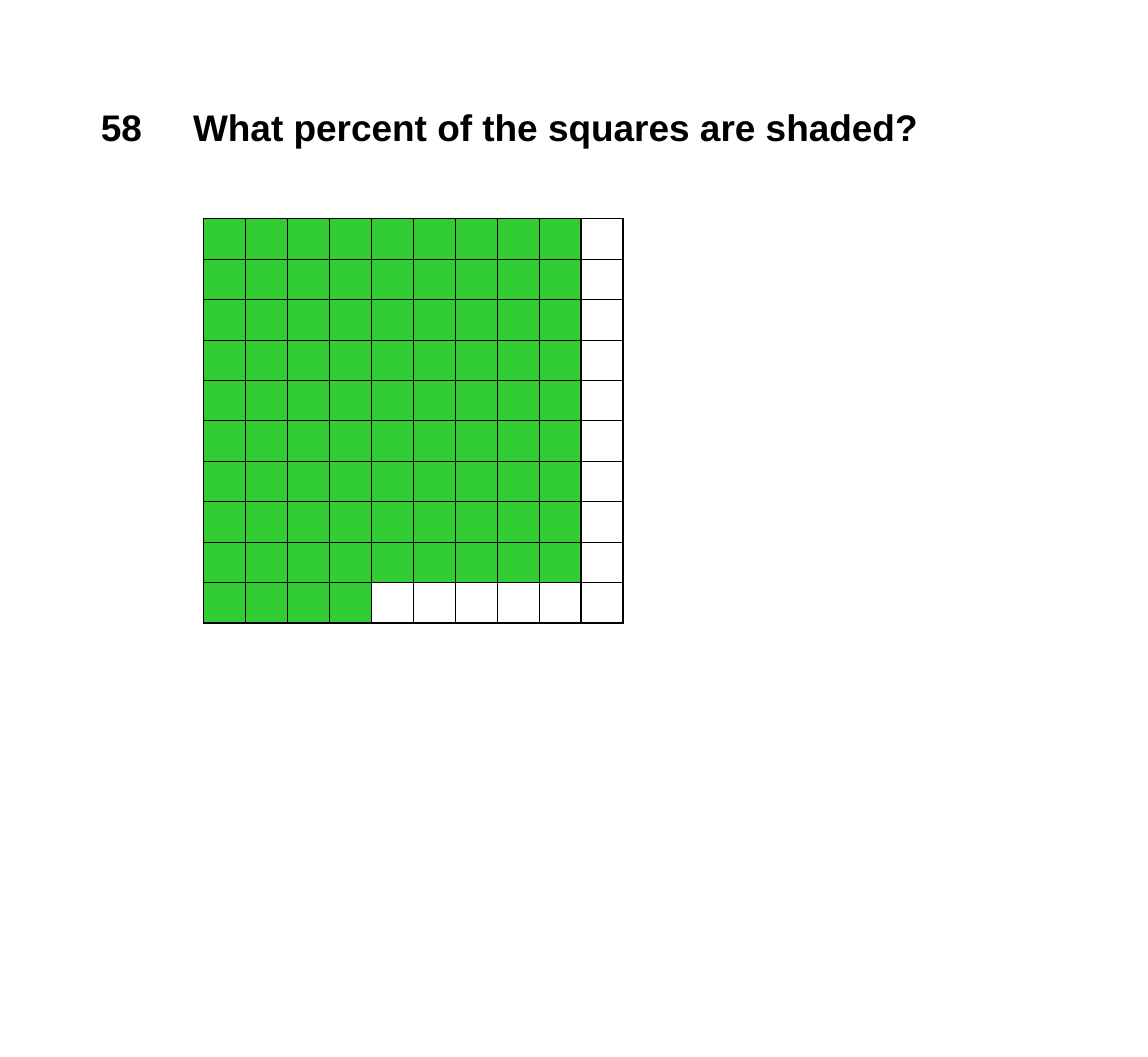
from itertools import product

from lxml.etree import SubElement
from pptx import Presentation
from pptx.dml.color import RGBColor
from pptx.enum.text import MSO_ANCHOR, MSO_AUTO_SIZE, PP_ALIGN
from pptx.oxml.ns import qn
from pptx.util import Pt

EMU_PER_PX = 9144
BLACK = RGBColor(0x00, 0x00, 0x00)
WHITE = RGBColor(0xFF, 0xFF, 0xFF)
GREEN = RGBColor(0x32, 0xCD, 0x32)
GRID_SIZE = 10
FULL_SHADED_COLUMNS = 9
LAST_ROW_SHADED = 4


def px(length):
    return int(length * EMU_PER_PX)


def write_text(shape, text, size=28, font="Arial", color=BLACK, bold=True, align=PP_ALIGN.LEFT):
    frame = shape.text_frame
    frame.word_wrap = True
    frame.auto_size = MSO_AUTO_SIZE.SHAPE_TO_FIT_TEXT
    frame.vertical_anchor = MSO_ANCHOR.TOP
    frame.margin_left = frame.margin_right = px(11)
    frame.margin_top = frame.margin_bottom = px(5)
    paragraph = frame.paragraphs[0]
    paragraph.alignment = align
    run = paragraph.add_run()
    run.text = text
    run.font.name = font
    run.font.size = Pt(size)
    run.font.bold = bold
    run.font.color.rgb = color


def add_question(slide, left, top, width, height):
    number = slide.shapes.add_textbox(px(left), px(top), px(width), px(height))
    write_text(number, "58")
    title = slide.shapes.title
    title.left, title.top = px(left + 97), px(top)
    title.width, title.height = px(width), px(height)
    write_text(title, "What percent of the squares are shaded?")


def add_borders(cell, color=BLACK, width=1):
    properties = cell._tc.get_or_add_tcPr()
    for index, side in enumerate(("a:lnL", "a:lnR", "a:lnT", "a:lnB")):
        line = SubElement(properties, qn(side), w=str(Pt(width)))
        fill = SubElement(line, qn("a:solidFill"))
        SubElement(fill, qn("a:srgbClr"), val=str(color))
        properties.insert(index, line)


def add_square_grid(slide, left, top, width, height):
    frame = slide.shapes.add_table(
        GRID_SIZE, GRID_SIZE, px(left), px(top), px(width), px(height)
    )
    table = frame.table
    table.first_row = table.horz_banding = False
    for row, column in product(range(GRID_SIZE), repeat=2):
        cell = table.cell(row, column)
        shaded = LAST_ROW_SHADED if row == GRID_SIZE - 1 else FULL_SHADED_COLUMNS
        cell.fill.solid()
        cell.fill.fore_color.rgb = GREEN if column < shaded else WHITE
        cell.text_frame.paragraphs[0].font.size = Pt(12)
        add_borders(cell)


def main():
    presentation = Presentation()
    presentation.slide_width = px(1207)
    presentation.slide_height = px(1111)
    slide = presentation.slides.add_slide(presentation.slide_layouts[5])
    add_question(slide, 95, 105, 927, 58)
    add_square_grid(slide, 214, 230, 441, 425)
    presentation.save("out.pptx")


if __name__ == "__main__":
    main()
